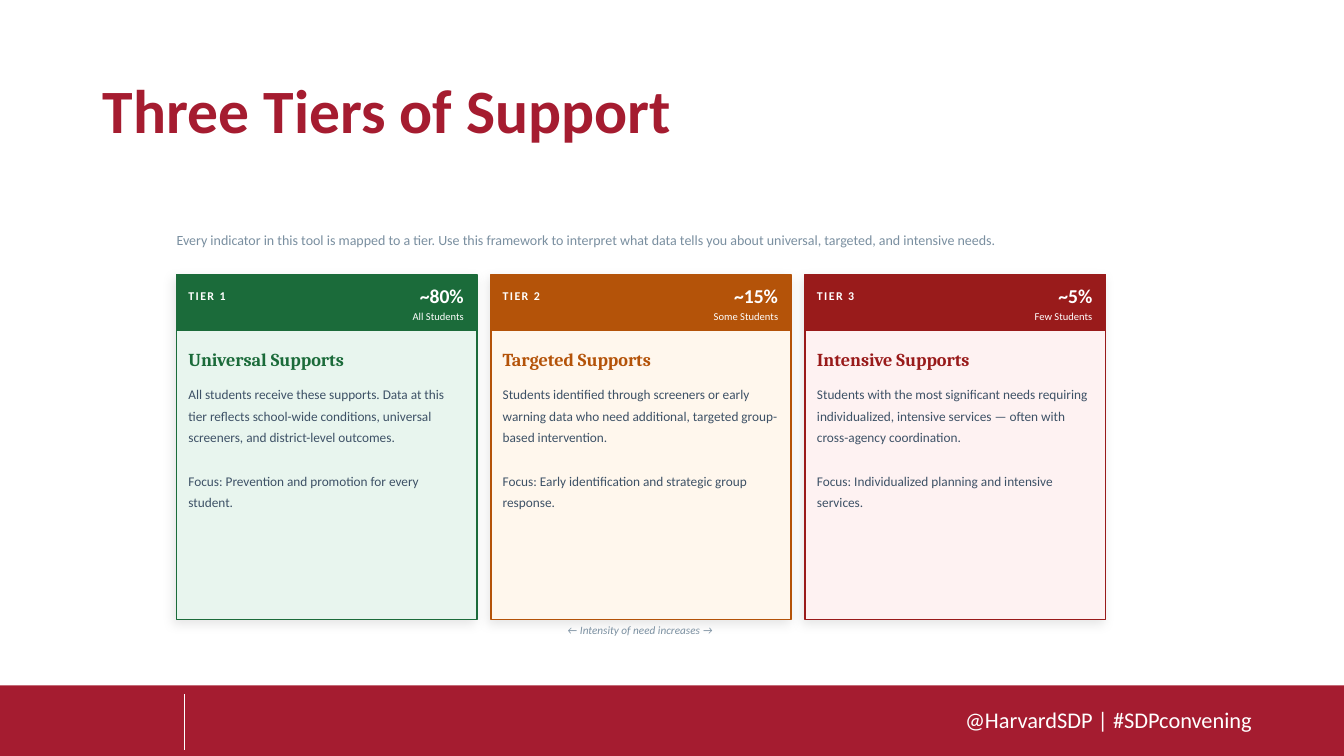
from lxml.etree import SubElement
from pptx import Presentation
from pptx.dml.color import RGBColor
from pptx.enum.shapes import MSO_CONNECTOR, MSO_SHAPE
from pptx.enum.text import MSO_ANCHOR, MSO_AUTO_SIZE, PP_ALIGN
from pptx.oxml.ns import qn
from pptx.util import Cm, Pt

COLORS = {
    "crimson": "A51C30",
    "white": "FFFFFF",
    "muted": "7A8FA0",
    "body": "3D5166",
    "shadow": "000000",
    "green": "1B6B3A",
    "mint": "E8F5EE",
    "orange": "B45309",
    "cream": "FFF7ED",
    "red": "991B1B",
    "blush": "FEF2F2",
}

TIERS = [
    ("TIER 1", "~80%", "All Students", "Universal Supports", "green", "mint",
     "All students receive these supports. Data at this tier reflects school-wide "
     "conditions, universal screeners, and district-level outcomes.",
     "Focus: Prevention and promotion for every student."),
    ("TIER 2", "~15%", "Some Students", "Targeted Supports", "orange", "cream",
     "Students identified through screeners or early warning data who need "
     "additional, targeted group-based intervention.",
     "Focus: Early identification and strategic group response."),
    ("TIER 3", "~5%", "Few Students", "Intensive Supports", "red", "blush",
     "Students with the most significant needs requiring individualized, intensive "
     "services — often with cross-agency coordination.",
     "Focus: Individualized planning and intensive services."),
]

LEFT, TOP, PITCH = 4.45, 6.93, 7.92
CARD_WIDTH, CARD_HEIGHT, HEADER_HEIGHT, PADDING = 7.57, 8.69, 1.4, 0.3
BLANK_LINE = 15.6


def rgb(name):
    return RGBColor.from_string(COLORS[name])


def apply(target, values):
    for name, value in values.items():
        setattr(target, name, value)


class SlideBuilder:
    font = "Calibri"

    def __init__(self, presentation):
        self.slide = presentation.slides.add_slide(presentation.slide_layouts[5])

    def fill_text(self, frame, paragraphs, size, color, align=PP_ALIGN.LEFT,
                  line_spacing=None, gap=0, tracking=None, **font):
        for index, text in enumerate(paragraphs):
            paragraph = frame.paragraphs[0] if index == 0 else frame.add_paragraph()
            apply(paragraph, {"alignment": align, "line_spacing": line_spacing,
                              "space_before": Pt(gap if index else 0)})
            run = paragraph.add_run()
            run.text = text
            apply(run.font, {"name": self.font, "size": Pt(size), **font})
            run.font.color.rgb = rgb(color)
            if tracking:
                run._r.get_or_add_rPr().set("spc", str(tracking))

    def title(self, text, left, top, width, height):
        title = self.slide.shapes.title
        apply(title, {"left": Cm(left), "top": Cm(top),
                      "width": Cm(width), "height": Cm(height)})
        apply(title.text_frame, {"vertical_anchor": MSO_ANCHOR.MIDDLE, "word_wrap": True,
                                 "auto_size": MSO_AUTO_SIZE.NONE})
        self.fill_text(title.text_frame, [text], 44, "crimson", line_spacing=0.9, bold=True)

    def text(self, paragraphs, left, top, width, height, size, color,
             anchor=MSO_ANCHOR.MIDDLE, **style):
        box = self.slide.shapes.add_textbox(Cm(left), Cm(top), Cm(width), Cm(height))
        apply(box.text_frame, {"word_wrap": True, "vertical_anchor": anchor,
                               "margin_left": 0, "margin_right": 0,
                               "margin_top": 0, "margin_bottom": 0})
        self.fill_text(box.text_frame, paragraphs, size, color, **style)

    def rectangle(self, left, top, width, height, fill, line=None, shadow=False):
        shape = self.slide.shapes.add_shape(
            MSO_SHAPE.RECTANGLE, Cm(left), Cm(top), Cm(width), Cm(height))
        shape.shadow.inherit = False
        shape.fill.solid()
        shape.fill.fore_color.rgb = rgb(fill)
        if line:
            shape.line.color.rgb = rgb(line)
            shape.line.width = Pt(1)
        else:
            shape.line.fill.background()
        if shadow:
            effects = shape._element.spPr.find(qn("a:effectLst"))
            outer = SubElement(effects, qn("a:outerShdw"), blurRad=str(Pt(8)),
                               dist=str(Pt(3)), dir="8100000", algn="bl",
                               rotWithShape="0")
            color = SubElement(outer, qn("a:srgbClr"), val=COLORS["shadow"])
            SubElement(color, qn("a:alpha"), val="10000")

    def line(self, left, top, right, bottom, color, width):
        connector = self.slide.shapes.add_connector(
            MSO_CONNECTOR.STRAIGHT, Cm(left), Cm(top), Cm(right), Cm(bottom))
        connector.line.color.rgb = rgb(color)
        connector.line.width = Pt(width)
        SubElement(connector._element.spPr, qn("a:effectLst"))

    def card(self, left, label, share, students, heading, accent, tint, summary, focus):
        inner = left + PADDING
        inner_width = CARD_WIDTH - 2 * PADDING
        share_left = left + 4.32
        self.rectangle(left, TOP, CARD_WIDTH, CARD_HEIGHT, tint, accent, shadow=True)
        self.rectangle(left, TOP, CARD_WIDTH, HEADER_HEIGHT, accent, accent)
        self.text([label], inner, 7.09, 3.05, 0.71, 8.5, "white", bold=True, tracking=100)
        self.text([share], share_left, 7.06, 2.92, 0.76, 14, "white",
                  align=PP_ALIGN.RIGHT, bold=True)
        self.text([students], share_left, 7.75, 2.92, 0.46, 7.5, "white",
                  align=PP_ALIGN.RIGHT)
        self.text([heading], inner, 8.66, inner_width, 0.76, 13, accent,
                  bold=True, name="Cambria")
        self.text([summary, focus], inner, 9.6, inner_width, 5.64, 9.5, "body",
                  anchor=MSO_ANCHOR.TOP, line_spacing=1.35, gap=BLANK_LINE)


def main():
    presentation = Presentation()
    apply(presentation, {"slide_width": Cm(33.87), "slide_height": Cm(19.05)})
    builder = SlideBuilder(presentation)
    builder.rectangle(0, 17.27, 33.87, 1.78, "crimson")
    builder.text(["@HarvardSDP | #SDPconvening"], 21.31, 17.65, 10.24, 0.94, 16, "white",
                 align=PP_ALIGN.RIGHT)
    builder.line(4.65, 17.5, 4.65, 18.9, "white", 0.5)
    builder.title("Three Tiers of Support", 2.34, 1.02, 29.21, 3.68)
    builder.text(["Every indicator in this tool is mapped to a tier. Use this framework to "
                  "interpret what data tells you about universal, targeted, and intensive "
                  "needs."], LEFT, 5.59, 22.61, 0.89, 10, "muted")
    for index, tier in enumerate(TIERS):
        builder.card(LEFT + index * PITCH, *tier)
    builder.text(["← Intensity of need increases →"], LEFT, 15.62, 23.37, 0.51, 8, "muted",
                 align=PP_ALIGN.CENTER, italic=True)
    presentation.save("out.pptx")


if __name__ == "__main__":
    main()
